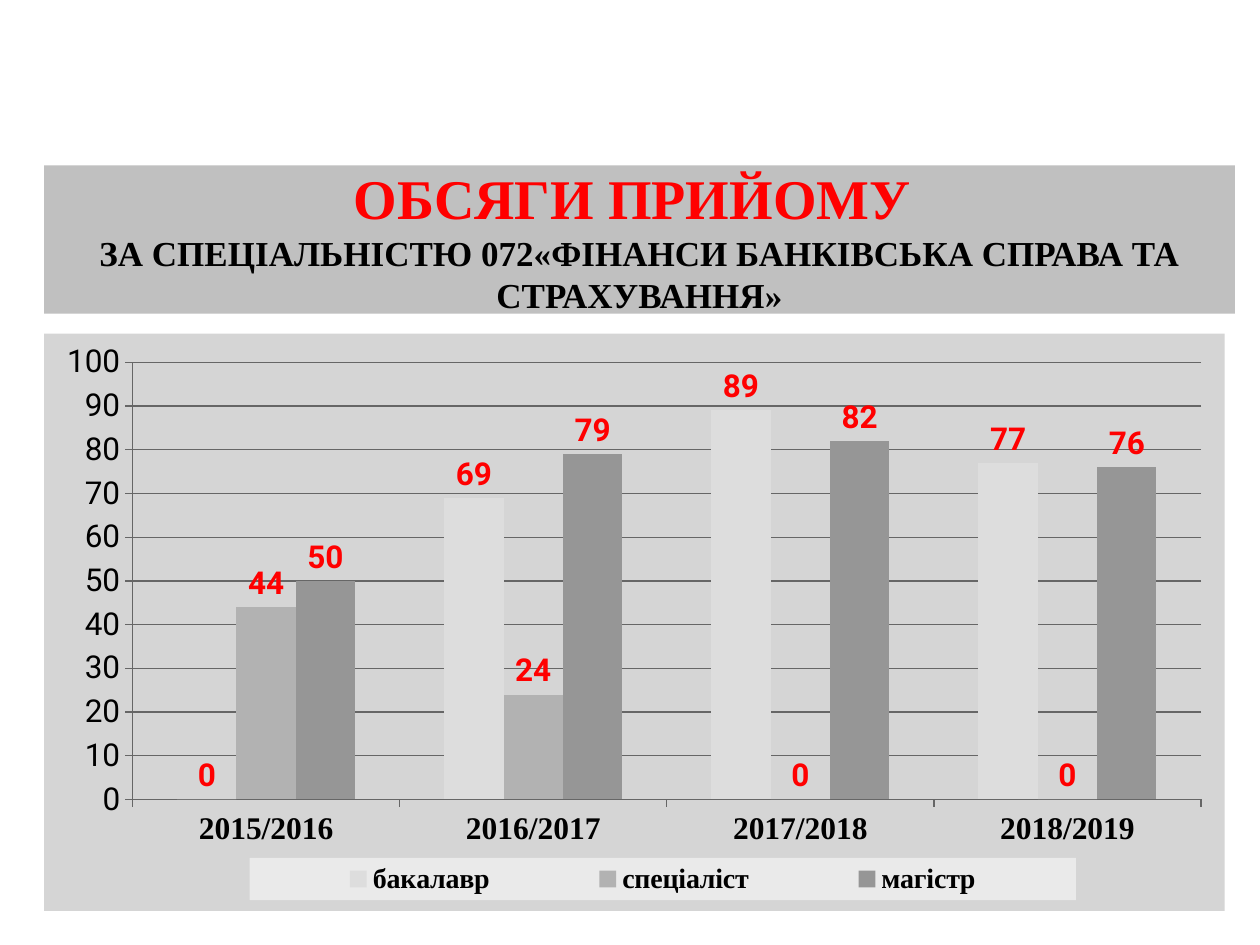
from dataclasses import dataclass

from lxml import etree
from pptx import Presentation
from pptx import util as u
from pptx.chart.data import CategoryChartData
from pptx.dml.color import RGBColor
from pptx.enum import chart as charts, shapes, text
from pptx.oxml import parse_xml
from pptx.oxml.ns import nsdecls, qn


@dataclass(frozen=True)
class Theme:
    serif: str = "Times New Roman"
    sans: str = "Roboto"
    accent: str = "FF0000"
    ink: str = "000000"
    banner: str = "C0C0C0"
    panel: str = "D5D5D5"
    legend: str = "EAEAEA"
    rule: str = "666666"
    heading: int = 32
    subheading: int = 20
    body: int = 18
    key: int = 16
    hairline: float = 0.75


@dataclass(frozen=True)
class Area:
    left: float
    top: float
    width: float
    height: float

    def on_slide(self) -> tuple[int, ...]:
        return (u.Inches(self.left * WIDTH), u.Inches(self.top * HEIGHT),
                u.Inches(self.width * WIDTH), u.Inches(self.height * HEIGHT))


@dataclass(frozen=True)
class Degree:
    name: str
    intake: tuple[int, ...]
    color: str


WIDTH, HEIGHT = 10, 7.5
THEME = Theme()
BANNER = Area(0.035, 0.175, 0.945, 0.157)
PANEL = Area(0.035, 0.353, 0.937, 0.611)
PLOT = Area(0.075, 0.05, 0.905, 0.757)
LEGEND = Area(0.174, 0.908, 0.70, 0.073)
YEARS = ("2015/2016", "2016/2017", "2017/2018", "2018/2019")
DEGREES = (
    Degree("бакалавр", (0, 69, 89, 77), "DDDDDD"),
    Degree("спеціаліст", (44, 24, 0, 0), "B2B2B2"),
    Degree("магістр", (50, 79, 82, 76), "969696"),
)


def style(font, size: int, color: str, name: str, bold: bool) -> None:
    font.size, font.name, font.bold = u.Pt(size), name, bold
    font.color.rgb = RGBColor.from_string(color)


def paint(fill, color: str) -> None:
    fill.solid()
    fill.fore_color.rgb = RGBColor.from_string(color)


def rule(line) -> None:
    line.color.rgb = RGBColor.from_string(THEME.rule)
    line.width = u.Pt(THEME.hairline)


def filled_area(color: str):
    return parse_xml(
        f'<c:spPr {nsdecls("c", "a")}><a:solidFill><a:srgbClr val="{color}"/>'
        '</a:solidFill><a:ln><a:noFill/></a:ln></c:spPr>')


def manual_layout(area: Area, inner: bool = False):
    layout = etree.Element(qn("c:layout"))
    manual = etree.SubElement(layout, qn("c:manualLayout"))
    settings = {"layoutTarget": "inner"} if inner else {}
    settings |= {"xMode": "edge", "yMode": "edge", "x": area.left,
                 "y": area.top, "w": area.width, "h": area.height}
    for tag, value in settings.items():
        etree.SubElement(manual, qn(f"c:{tag}")).set("val", str(value))
    return layout


def place(parent, layout, index: int) -> None:
    for old in parent.findall(qn("c:layout")):
        parent.remove(old)
    parent.insert(index, layout)


def add_banner(page) -> None:
    box = page.shapes.add_shape(shapes.MSO_SHAPE.RECTANGLE, *BANNER.on_slide())
    box.shadow.inherit = False
    paint(box.fill, THEME.banner)
    box.line.fill.background()
    frame = box.text_frame
    frame.word_wrap = True
    frame.vertical_anchor = text.MSO_ANCHOR.MIDDLE
    para = frame.paragraphs[0]
    para.alignment = text.PP_ALIGN.CENTER
    span = para.add_run()
    span.text = "ОБСЯГИ ПРИЙОМУ "
    style(span.font, THEME.heading, THEME.accent, THEME.serif, True)
    para.add_line_break()
    span = para.add_run()
    span.text = "ЗА СПЕЦІАЛЬНІСТЮ 072«ФІНАНСИ БАНКІВСЬКА СПРАВА ТА СТРАХУВАННЯ»"
    style(span.font, THEME.subheading, THEME.ink, THEME.serif, True)


def add_legend(chart) -> None:
    chart.has_legend = True
    legend = chart.legend
    legend.position = charts.XL_LEGEND_POSITION.BOTTOM
    legend.include_in_layout = False
    style(legend.font, THEME.key, THEME.ink, THEME.serif, True)
    element = legend._element
    place(element, manual_layout(LEGEND), 1)
    element.find(qn("c:overlay")).addnext(filled_area(THEME.legend))


def style_axes(chart) -> None:
    years, counts = chart.category_axis, chart.value_axis
    for axis in (years, counts):
        axis.major_tick_mark = charts.XL_TICK_MARK.OUTSIDE
        axis.minor_tick_mark = charts.XL_TICK_MARK.NONE
        rule(axis.format.line)
    style(years.tick_labels.font, THEME.body, THEME.ink, THEME.serif, True)
    style(counts.tick_labels.font, THEME.body, THEME.ink, THEME.sans, False)
    counts.minimum_scale, counts.maximum_scale, counts.major_unit = 0, 100, 10
    counts.has_major_gridlines = True
    rule(counts.major_gridlines.format.line)


def add_intake_chart(page) -> None:
    data = CategoryChartData()
    data.categories = YEARS
    for degree in DEGREES:
        data.add_series(degree.name, degree.intake)
    chart = page.shapes.add_chart(
        charts.XL_CHART_TYPE.COLUMN_CLUSTERED, *PANEL.on_slide(), data).chart
    chart.has_title = False
    style(chart.font, THEME.body, THEME.ink, THEME.sans, False)
    plot = chart.plots[0]
    plot.gap_width, plot.overlap, plot.vary_by_categories = 150, 0, False
    for series, degree in zip(plot.series, DEGREES):
        paint(series.format.fill, degree.color)
        labels = series.data_labels
        labels.show_value = True
        labels.position = charts.XL_LABEL_POSITION.OUTSIDE_END
        style(labels.font, THEME.body, THEME.accent, THEME.sans, True)
    style_axes(chart)
    add_legend(chart)
    body = chart._chartSpace.find(qn("c:chart"))
    place(body.find(qn("c:plotArea")), manual_layout(PLOT, inner=True), 0)
    body.addnext(filled_area(THEME.panel))


def main() -> None:
    deck = Presentation()
    deck.slide_width, deck.slide_height = u.Inches(WIDTH), u.Inches(HEIGHT)
    page = deck.slides.add_slide(deck.slide_layouts[6])
    add_banner(page)
    add_intake_chart(page)
    deck.save("out.pptx")


if __name__ == "__main__":
    main()
